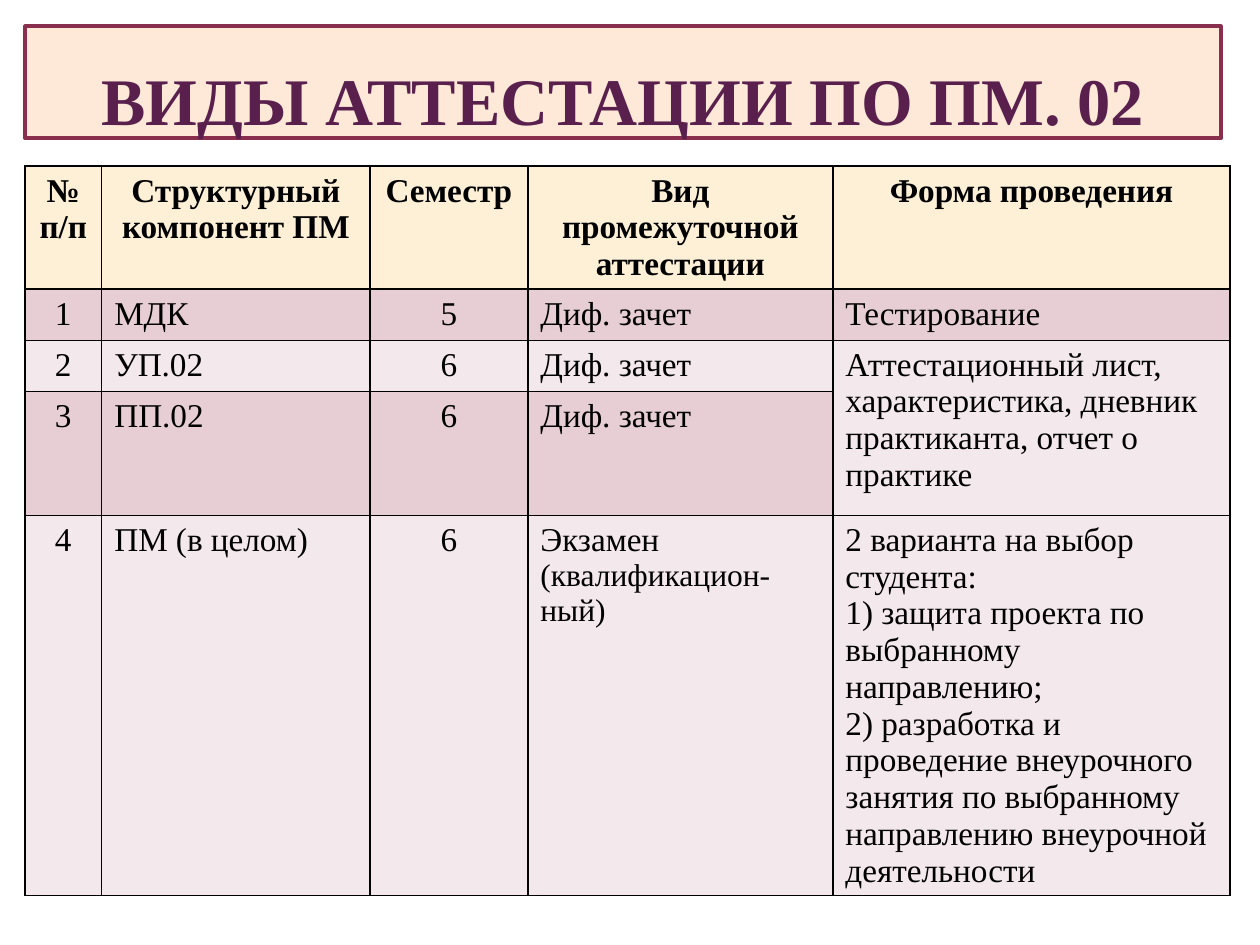
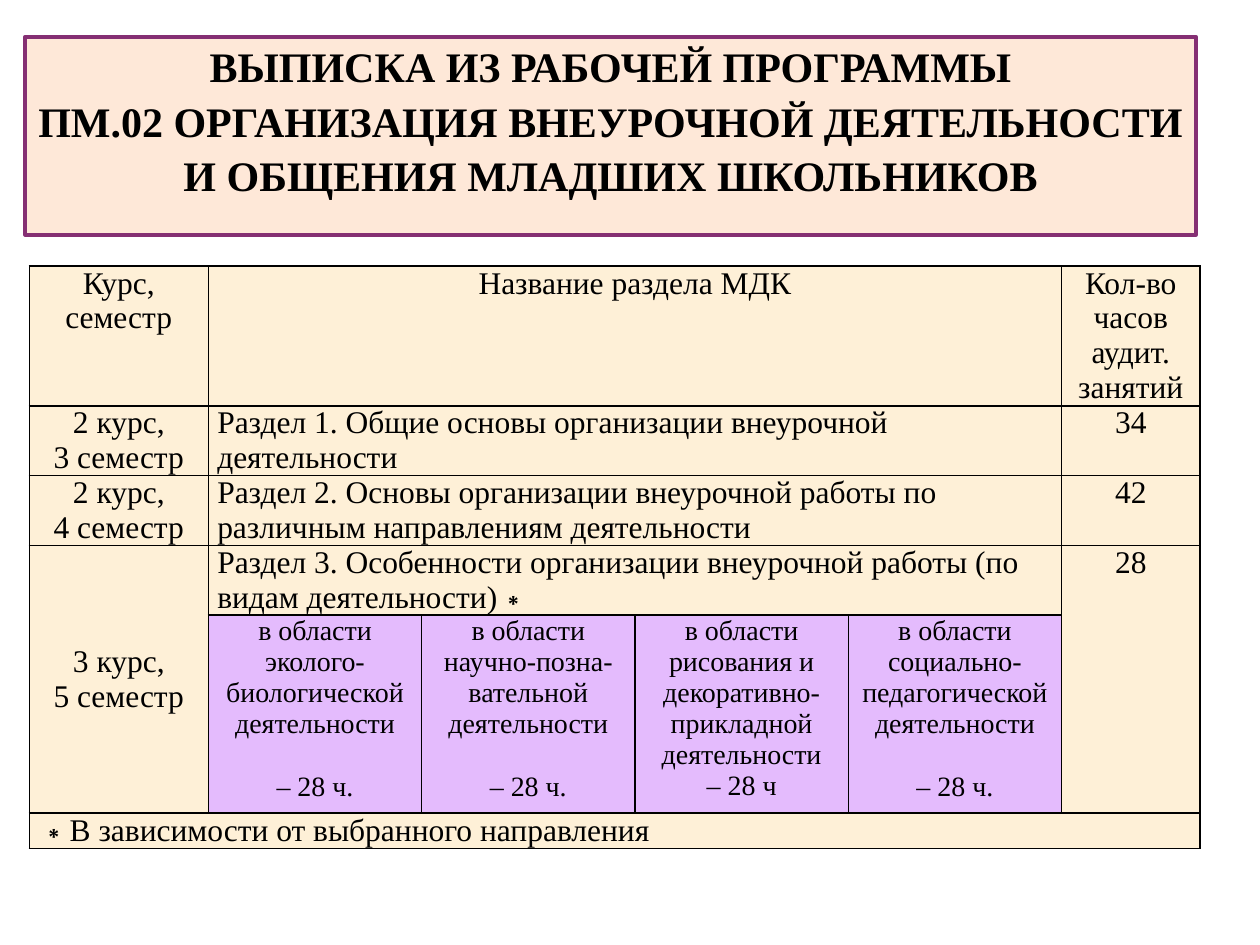
from lxml import etree
from pptx import Presentation
from pptx.dml.color import RGBColor
from pptx.enum.text import MSO_ANCHOR, MSO_AUTO_SIZE, PP_ALIGN
from pptx.oxml.ns import qn
from pptx.util import Cm, Pt

LEFT, CENTER = PP_ALIGN.LEFT, PP_ALIGN.CENTER
TOP, MIDDLE, BOTTOM = MSO_ANCHOR.TOP, MSO_ANCHOR.MIDDLE, MSO_ANCHOR.BOTTOM
NO_AUTOFIT = MSO_AUTO_SIZE.NONE
TITLE_ONLY = 5

FONT = "Times New Roman"
BLACK = "000000"
PEACH = "FEE8D8"
CREAM = "FEF0D7"
ROSE = "E6CED4"
PALE_ROSE = "F3E8EB"
LILAC = "E4BBFD"
PLUM = "591F4D"


def color(hex_string):
    return RGBColor.from_string(hex_string)


def add_borders(cell):
    properties = cell._tc.get_or_add_tcPr()
    for side in ("a:lnL", "a:lnR", "a:lnT", "a:lnB"):
        line = etree.SubElement(properties, qn(side), w=str(Pt(1)))
        fill = etree.SubElement(line, qn("a:solidFill"))
        etree.SubElement(fill, qn("a:srgbClr"), val=BLACK)


class Deck:
    """Holds the shared style and the slide being built."""

    def __init__(self):
        self.presentation = Presentation()
        self.presentation.slide_width = Cm(25.4)
        self.presentation.slide_height = Cm(19.05)
        self.slide = None

    def add_slide(self):
        layout = self.presentation.slide_layouts[TITLE_ONLY]
        self.slide = self.presentation.slides.add_slide(layout)

    def format_paragraph(self, paragraph, size, text_color=BLACK, bold=False,
                         alignment=CENTER):
        paragraph.alignment = alignment
        font = paragraph.font
        font.name, font.size, font.bold = FONT, Pt(size), bold
        font.color.rgb = color(text_color)

    def title(self, text, box, size, line_color, text_color=BLACK,
              anchor=TOP, line_spacing=1.0):
        shape = self.slide.shapes.title
        shape.left, shape.top, shape.width, shape.height = map(Cm, box)
        shape.shadow.inherit = False
        shape.fill.solid()
        shape.fill.fore_color.rgb = color(PEACH)
        shape.line.color.rgb = color(line_color)
        shape.line.width = Pt(2.25)
        frame = shape.text_frame
        frame.word_wrap = True
        frame.auto_size = NO_AUTOFIT
        frame.vertical_anchor = anchor
        frame.margin_left = frame.margin_right = Cm(0.13)
        frame.margin_top = frame.margin_bottom = 0
        paragraph = frame.paragraphs[0]
        paragraph.text = text
        paragraph.line_spacing = line_spacing
        self.format_paragraph(paragraph, size, text_color, bold=True)

    def table(self, left, top, widths, heights):
        """Add an empty bordered table without the banded style."""
        frame = self.slide.shapes.add_table(
            len(heights), len(widths), Cm(left), Cm(top),
            Cm(sum(widths)), Cm(sum(heights)))
        table = frame.table
        table.first_row = table.horz_banding = False
        for column, width in zip(table.columns, widths):
            column.width = Cm(width)
        for row, height in zip(table.rows, heights):
            row.height = Cm(height)
        for cell in table.iter_cells():
            add_borders(cell)
        return table

    def cell(self, cell, text, fill, size, bold=False, alignment=CENTER,
             tight=False):
        """Fill one cell; each line of text becomes a paragraph."""
        cell.fill.solid()
        cell.fill.fore_color.rgb = color(fill)
        if tight:
            cell.margin_left = cell.margin_right = Cm(0.18)
            cell.margin_top = cell.margin_bottom = 0
        cell.text_frame.text = text
        for paragraph in cell.text_frame.paragraphs:
            self.format_paragraph(paragraph, size, bold=bold,
                                  alignment=alignment)


def build_attestation(deck):
    deck.add_slide()
    deck.title("ВИДЫ АТТЕСТАЦИИ ПО ПМ. 02", (0.51, 0.53, 24.1, 2.26), 38,
               "8A2E4E", PLUM, BOTTOM)
    rows = [
        ("№\nп/п", "Структурный компонент ПМ", "Семестр",
         "Вид промежуточной аттестации", "Форма проведения"),
        ("1", "МДК", "5", "Диф. зачет", "Тестирование"),
        ("2", "УП.02", "6", "Диф. зачет",
         "Аттестационный лист, характеристика, дневник практиканта, "
         "отчет о практике"),
        ("3", "ПП.02", "6", "Диф. зачет", ""),
        ("4", "ПМ (в целом)", "6", "Экзамен ",
         "2 варианта на выбор студента:\n"
         "1) защита проекта по выбранному направлению;\n"
         "2) разработка и проведение внеурочного занятия по выбранному "
         "направлению внеурочной деятельности"),
    ]
    table = deck.table(0.5, 3.35, (1.55, 5.41, 3.18, 6.15, 8.01),
                       (2.48, 1.03, 1.03, 2.5, 7.65))
    row_fills = (CREAM, ROSE, PALE_ROSE, ROSE, PALE_ROSE)
    for row, (texts, fill) in enumerate(zip(rows, row_fills)):
        header = row == 0
        for column, text in enumerate(texts):
            centered = header or column in (0, 2)
            deck.cell(table.cell(row, column), text, fill, 19, header,
                      CENTER if centered else LEFT)
    table.cell(2, 4).merge(table.cell(3, 4))
    exam_kind = table.cell(4, 3).text_frame.paragraphs[0].add_run()
    exam_kind.text = "(квалификацион-ный)"
    exam_kind.font.size = Pt(18)


def build_programme(deck):
    deck.add_slide()
    deck.title("ВЫПИСКА ИЗ РАБОЧЕЙ ПРОГРАММЫ\vПМ.02 ОРГАНИЗАЦИЯ ВНЕУРОЧНОЙ "
               "ДЕЯТЕЛЬНОСТИ И ОБЩЕНИЯ МЛАДШИХ ШКОЛЬНИКОВ",
               (0.51, 0.74, 23.6, 3.99), 24, "852F73", line_spacing=1.08)
    sections = [
        ("Курс,\nсеместр", "Название раздела МДК",
         "Кол-во\nчасов\nаудит.\nзанятий"),
        ("2 курс,\n3 семестр",
         "Раздел 1. Общие основы организации внеурочной деятельности", "34"),
        ("2 курс,\n4 семестр",
         "Раздел 2. Основы организации внеурочной работы по различным "
         "направлениям деятельности", "42"),
        ("3 курс,\n5 семестр",
         "Раздел 3. Особенности организации внеурочной работы "
         "(по видам деятельности)∗", "28"),
    ]
    # Text of each area of activity and the space before its hours
    areas = [
        ("в области\nэколого-\nбиологической деятельности\n– 28 ч.", 18),
        ("в области\nнаучно-позна-вательной\nдеятельности\n– 28 ч.", 18),
        ("в области\nрисования и декоративно-прикладной деятельности\n– 28 ч",
         0),
        ("в области\nсоциально-педагогической деятельности\n– 28 ч.", 18),
    ]
    table = deck.table(0.59, 5.36, (3.61, 4.3, 4.3, 4.3, 4.3, 2.79),
                       (2.82, 1.4, 1.4, 1.4, 3.99, 0.71))
    for row, (term, section, hours) in enumerate(sections):
        table.cell(row, 1).merge(table.cell(row, 4))
        for column, text in ((0, term), (1, section), (5, hours)):
            is_section = row > 0 and column == 1
            deck.cell(table.cell(row, column), text, CREAM, 18,
                      alignment=LEFT if is_section else CENTER, tight=True)
    for column in (0, 5):
        table.cell(3, column).merge(table.cell(4, column))
    table.cell(3, 0).vertical_anchor = MIDDLE
    for column, (text, space) in enumerate(areas, start=1):
        cell = table.cell(4, column)
        deck.cell(cell, text, LILAC, 16, tight=True)
        cell.text_frame.paragraphs[-1].space_before = Pt(space)
    footnote = table.cell(5, 0)
    footnote.merge(table.cell(5, 5))
    deck.cell(footnote, "∗В зависимости от выбранного направления", CREAM, 18,
              alignment=LEFT, tight=True)


def main():
    deck = Deck()
    build_attestation(deck)
    build_programme(deck)
    deck.presentation.save("out.pptx")


if __name__ == "__main__":
    main()
